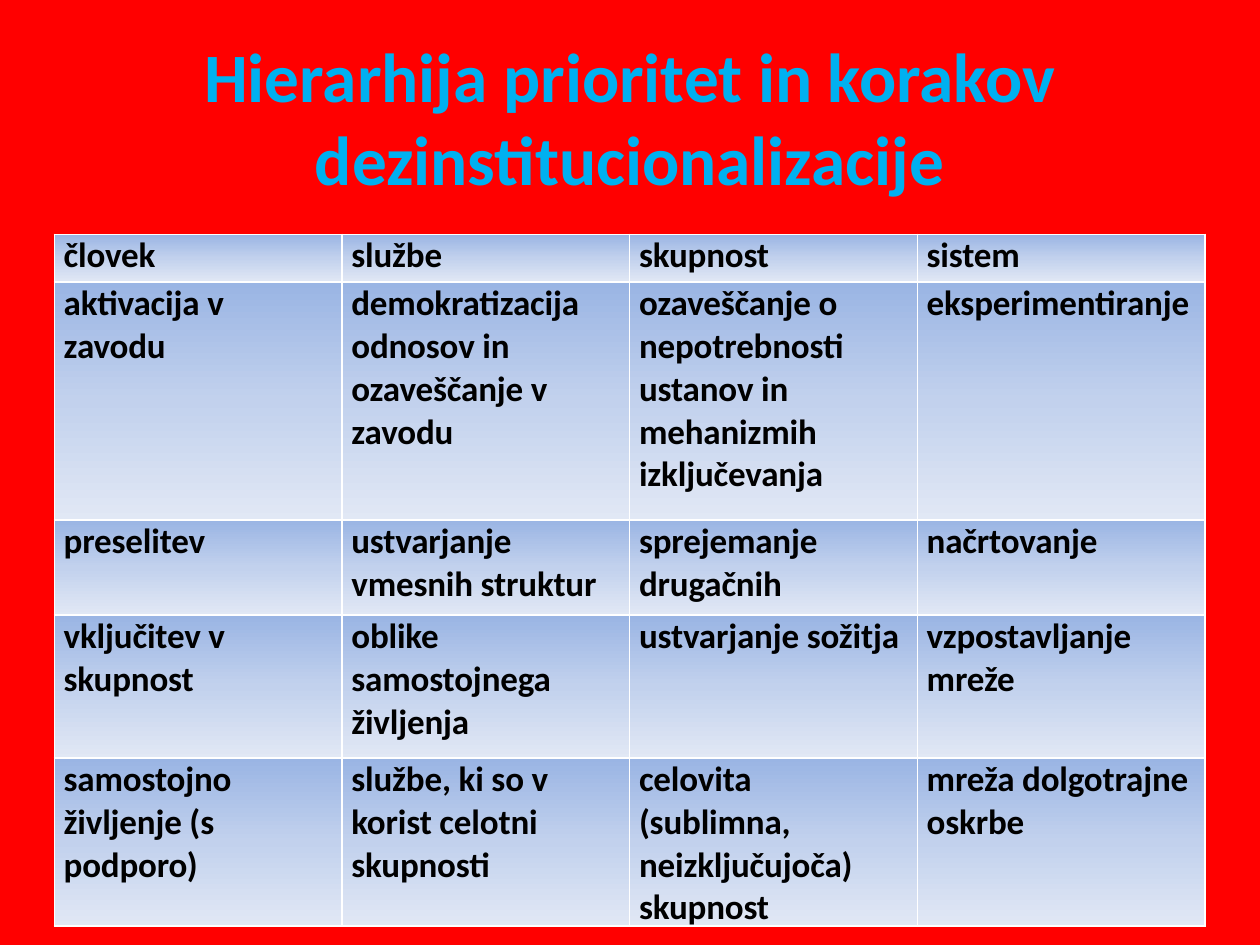
from lxml import etree
from pptx import Presentation
from pptx.dml.color import RGBColor
from pptx.enum.text import MSO_ANCHOR, PP_ALIGN
from pptx.oxml.ns import qn
from pptx.util import Pt

MIDDLE = MSO_ANCHOR.MIDDLE
CENTER = PP_ALIGN.CENTER
BLANK_LAYOUT = 6

RED, BLUE, BLACK, WHITE = "FF0000", "00B0F0", "000000", "FFFFFF"
CELL_GRADIENT = {0: "9AB5E4", 50: "C2D1ED", 100: "E1E8F5"}
TITLE_FORMAT = {"name": "Calibri", "size": Pt(39.6), "bold": True}
CELL_FORMAT = {"name": "Calibri", "size": Pt(20), "bold": True}
CELL_MARGINS = {
    "margin_left": Pt(5.4),
    "margin_right": Pt(5.4),
    "margin_top": 0,
    "margin_bottom": 0,
}

TITLE = "Hierarhija prioritet in korakov dezinstitucionalizacije"
ROWS = [
    ["človek", "službe", "skupnost", "sistem"],
    [
        "aktivacija v zavodu",
        "demokratizacija odnosov in ozaveščanje v zavodu",
        "ozaveščanje o nepotrebnosti ustanov in mehanizmih izključevanja",
        "eksperimentiranje",
    ],
    ["preselitev", "ustvarjanje vmesnih struktur", "sprejemanje drugačnih", "načrtovanje"],
    [
        "vključitev v skupnost",
        "oblike samostojnega življenja",
        "ustvarjanje sožitja",
        "vzpostavljanje mreže",
    ],
    [
        "samostojno življenje (s podporo)",
        "službe, ki so v korist celotni skupnosti",
        "celovita (sublimna, neizključujoča) skupnost",
        "mreža dolgotrajne oskrbe",
    ],
]
ROW_HEIGHTS = [27.2, 136, 54.4, 81.6, 81.6]


def color(hex_string):
    return RGBColor.from_string(hex_string)


def set_attributes(target, values):
    for name, value in values.items():
        setattr(target, name, value)


def add_run(paragraph, text, font_format, hex_string):
    run = paragraph.add_run()
    run.text = text
    set_attributes(run.font, font_format)
    run.font.color.rgb = color(hex_string)
    return run


def add_element(parent, tag, **attributes):
    return etree.SubElement(parent, qn(tag), attributes)


def add_title(slide, left, top, width, height):
    shape = slide.shapes.add_textbox(Pt(left), Pt(top), Pt(width), Pt(height))
    frame = shape.text_frame
    set_attributes(frame, {"word_wrap": True, "vertical_anchor": MIDDLE})
    paragraph = frame.paragraphs[0]
    paragraph.alignment = CENTER
    add_run(paragraph, TITLE, TITLE_FORMAT, BLUE)


def style_cell(cell):
    """Give the cell white 1 pt borders and a gradient from top to bottom."""
    set_attributes(cell, CELL_MARGINS)
    properties = cell._tc.get_or_add_tcPr()
    for side in ("a:lnL", "a:lnR", "a:lnT", "a:lnB"):
        line = add_element(properties, side, w=str(Pt(1)))
        line_fill = add_element(line, "a:solidFill")
        add_element(line_fill, "a:srgbClr", val=WHITE)
    gradient = add_element(properties, "a:gradFill", rotWithShape="1")
    stops = add_element(gradient, "a:gsLst")
    for percent, hex_string in CELL_GRADIENT.items():
        stop = add_element(stops, "a:gs", pos=str(percent * 1000))
        add_element(stop, "a:srgbClr", val=hex_string)
    add_element(gradient, "a:lin", ang=str(90 * 60000), scaled="0")


def add_priority_table(slide, left, top, width):
    column_count = len(ROWS[0])
    frame = slide.shapes.add_table(
        len(ROWS), column_count, Pt(left), Pt(top), Pt(width), Pt(sum(ROW_HEIGHTS))
    )
    table = frame.table
    set_attributes(table, {"first_row": False, "horz_banding": False})
    for column in table.columns:
        column.width = Pt(width / column_count)
    for row, height, texts in zip(table.rows, ROW_HEIGHTS, ROWS):
        row.height = Pt(height)
        for cell, text in zip(row.cells, texts):
            style_cell(cell)
            run = add_run(cell.text_frame.paragraphs[0], text, CELL_FORMAT, BLACK)
            run.font._element.set("spc", "-10")


def main():
    presentation = Presentation()
    set_attributes(presentation, {"slide_width": Pt(720), "slide_height": Pt(540)})
    slide = presentation.slides.add_slide(presentation.slide_layouts[BLANK_LAYOUT])
    background = slide.background.fill
    background.solid()
    background.fore_color.rgb = color(RED)
    add_title(slide, 36, 21.6, 648, 90)
    add_priority_table(slide, 31, 134, 657.6)
    presentation.save("out.pptx")


if __name__ == "__main__":
    main()
